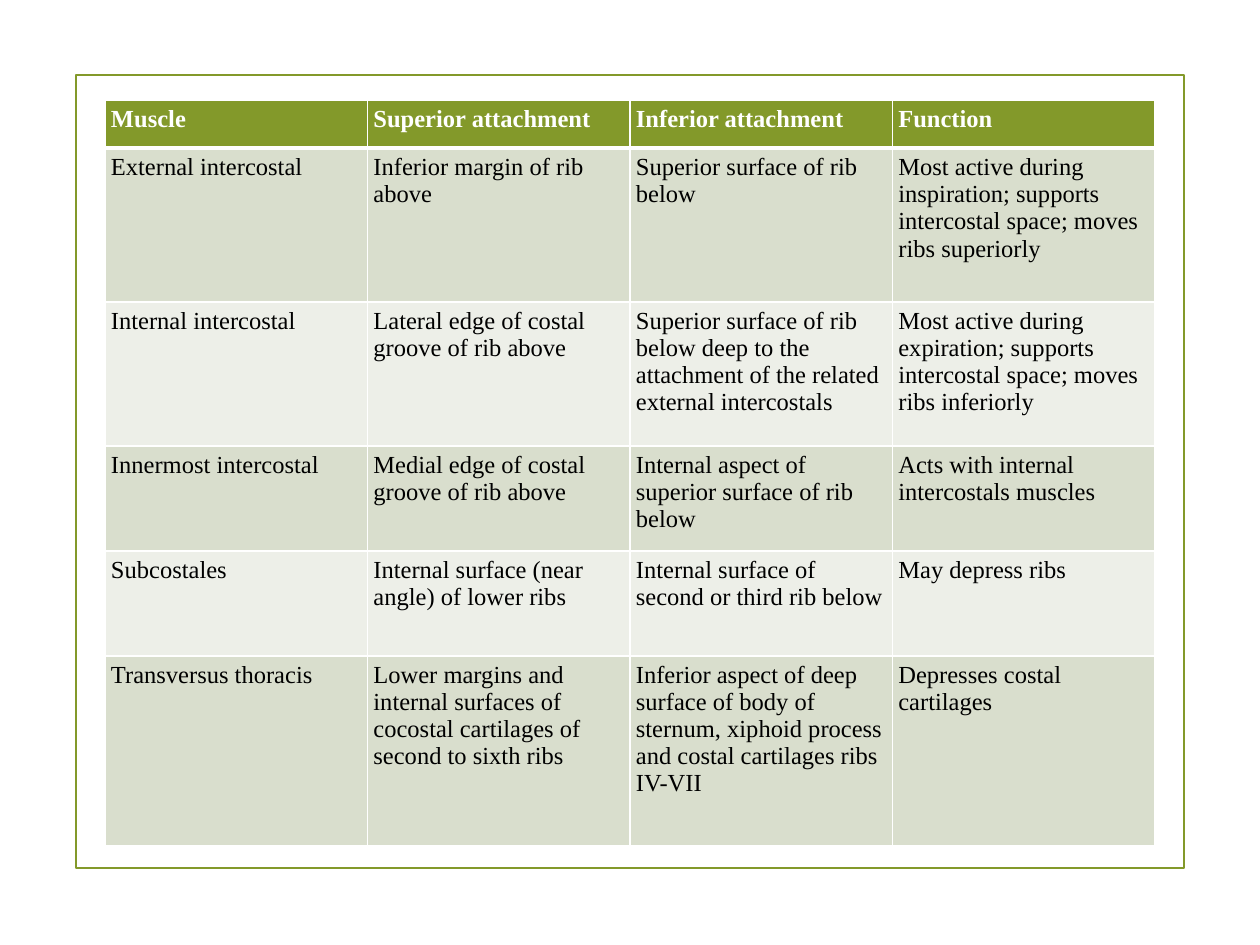
from lxml.etree import SubElement
from pptx import Presentation
from pptx.dml.color import RGBColor
from pptx.enum.shapes import MSO_SHAPE
from pptx.oxml.ns import qn
from pptx.util import Emu, Pt

PX = 914400 // 126
FONT = "Times New Roman"
GREEN, WHITE, BLACK = "83992A", "FFFFFF", "000000"
BANDS = ("D9DECD", "EDEFE8")

ROW_HEIGHTS = (48, 154, 144, 105, 105, 190)
MUSCLES = (
    ("Muscle", "Superior attachment", "Inferior attachment", "Function"),
    ("External intercostal",
     "Inferior margin of rib above",
     "Superior surface of rib below",
     "Most active during inspiration; supports intercostal space; moves ribs superiorly"),
    ("Internal intercostal",
     "Lateral edge of costal groove of rib above",
     "Superior surface of rib below deep to the attachment of the related external intercostals",
     "Most active during expiration; supports intercostal space; moves ribs inferiorly"),
    ("Innermost intercostal",
     "Medial edge of costal groove of rib above",
     "Internal aspect of superior surface of rib below",
     "Acts with internal intercostals muscles"),
    ("Subcostales",
     "Internal surface (near angle) of lower ribs",
     "Internal surface of second or third rib below",
     "May depress ribs"),
    ("Transversus thoracis",
     "Lower margins and internal surfaces of cocostal cartilages of second to sixth ribs",
     "Inferior aspect of deep surface of body of sternum, xiphoid process and costal cartilages ribs IV-VII",
     "Depresses costal cartilages"),
)


def px(length):
    return Emu(length * PX)


def color(hex_code):
    return RGBColor.from_string(hex_code)


def write(frame, text, size=14, ink=BLACK, bold=False):
    run = frame.paragraphs[0].add_run()
    run.text = text
    run.font.name = FONT
    run.font.size = Pt(size)
    run.font.bold = bold
    run.font.color.rgb = color(ink)


def add_borders(cell, top=1, bottom=1):
    """Draw white cell borders; must come before the fill."""
    properties = cell._tc.get_or_add_tcPr()
    for side, width in (("L", 1), ("R", 1), ("T", top), ("B", bottom)):
        border = SubElement(properties, qn(f"a:ln{side}"), w=str(Pt(width)))
        solid = SubElement(border, qn("a:solidFill"))
        SubElement(solid, qn("a:srgbClr"), val=WHITE)


def add_frame(slide, left, top, width, height):
    frame = slide.shapes.add_shape(
        MSO_SHAPE.RECTANGLE, px(left), px(top), px(width), px(height))
    frame.shadow.inherit = False
    frame.fill.background()
    frame.line.color.rgb = color(GREEN)
    frame.line.width = Pt(1.25)


def add_muscle_table(slide, left, top, width, height):
    table = slide.shapes.add_table(
        len(MUSCLES), len(MUSCLES[0]),
        px(left), px(top), px(width), px(height)).table
    for column in table.columns:
        column.width = px(width) // len(MUSCLES[0])
    for row, row_height in zip(table.rows, ROW_HEIGHTS):
        row.height = px(row_height)

    for r, entries in enumerate(MUSCLES):
        header = r == 0
        for c, entry in enumerate(entries):
            cell = table.cell(r, c)
            cell.margin_left = cell.margin_right = px(6)
            cell.margin_top = cell.margin_bottom = px(6)
            # Thick rule between the header and the body
            add_borders(cell, top=3 if r == 1 else 1, bottom=3 if header else 1)
            cell.fill.solid()
            cell.fill.fore_color.rgb = color(GREEN if header else BANDS[(r - 1) % 2])
            write(cell.text_frame, entry, ink=WHITE if header else BLACK, bold=header)


def main():
    presentation = Presentation()
    presentation.slide_width = px(1260)
    presentation.slide_height = px(945)
    slide = presentation.slides.add_slide(presentation.slide_layouts[6])

    # Green outline, then the table inside it
    add_frame(slide, 76, 75, 1108, 793)
    add_muscle_table(slide, 105, 100, 1050, sum(ROW_HEIGHTS))

    presentation.save("out.pptx")


if __name__ == "__main__":
    main()
